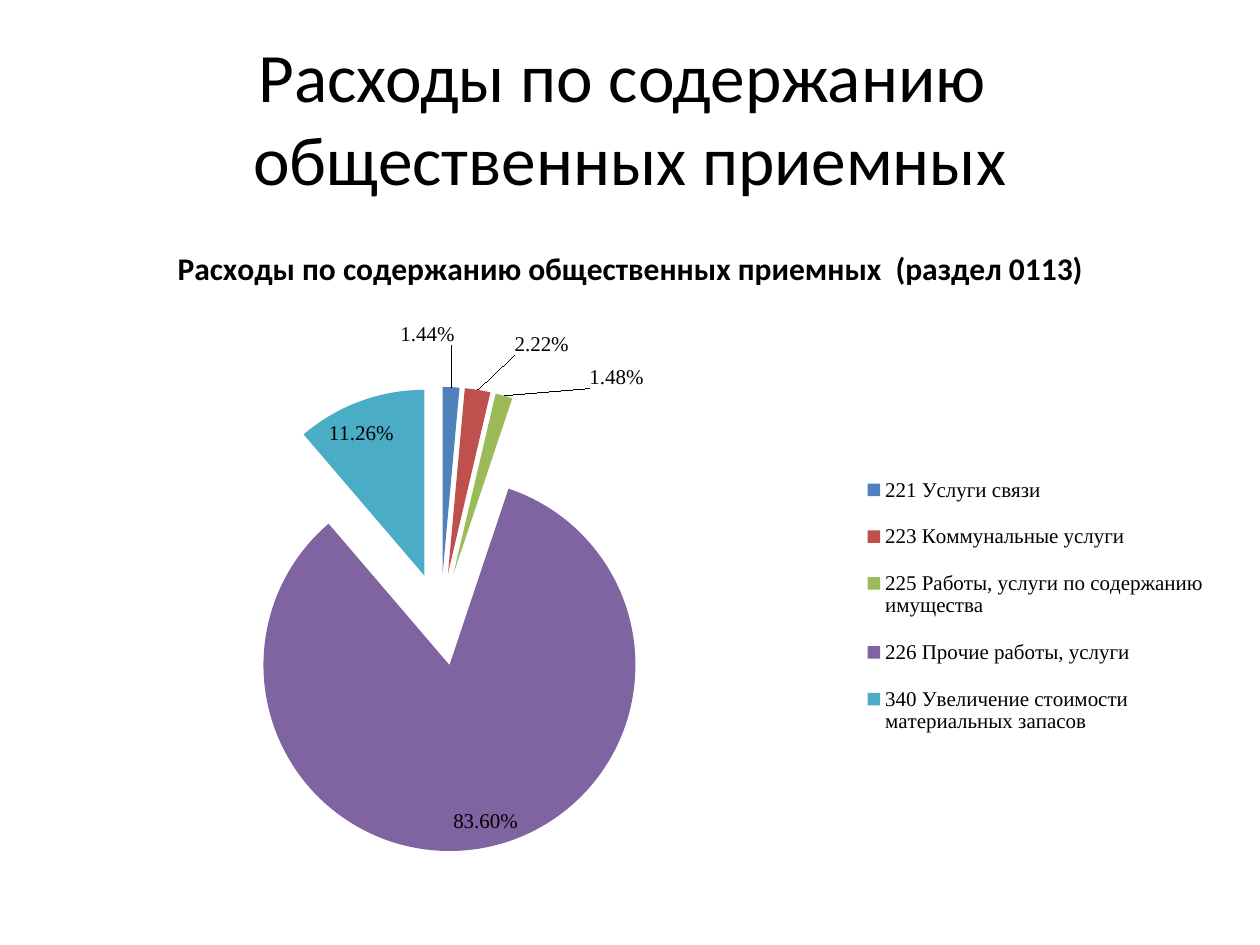
from dataclasses import dataclass

import lxml.etree
import pptx
import pptx.chart.data
import pptx.dml.color
import pptx.enum.chart
import pptx.enum.text
import pptx.oxml
import pptx.oxml.ns
import pptx.util

Inches = pptx.util.Inches
Pt = pptx.util.Pt
qn = pptx.oxml.ns.qn

EXPENSES = {
    "221 Услуги связи": 1.44,
    "223 Коммунальные услуги": 2.22,
    "225 Работы, услуги по содержанию имущества": 1.48,
    "226 Прочие работы, услуги": 83.6,
    "340 Увеличение стоимости материальных запасов": 11.26,
}
# Shifts of the labels of the thin slices, as fractions of the chart
LABEL_SHIFTS = {0: (-0.02, -0.05), 1: (0.03, -0.04), 2: (0.07, 0)}


@dataclass(frozen=True)
class Theme:
    heading_font: str = "Calibri"
    label_font: str = "Times New Roman"
    text: str = "000000"
    slices: tuple = ("4F81BD", "C0504D", "9BBB59", "8064A2", "4BACC6")
    title_size: float = 39.6
    chart_title_size: float = 18
    chart_size: float = 10
    label_size: float = 12


def manual_layout(**values):
    """Return a c:layout element with the given manualLayout settings."""
    layout = pptx.oxml.parse_xml(
        f'<c:layout xmlns:c="{pptx.oxml.ns.nsuri("c")}"><c:manualLayout/></c:layout>')
    for tag, value in values.items():
        lxml.etree.SubElement(layout[0], qn(f"c:{tag}")).set("val", str(value))
    return layout


def replace_layout(parent, layout, position):
    for old in parent.findall(qn("c:layout")):
        parent.remove(old)
    parent.insert(position, layout)


class SlideBuilder:
    def __init__(self, slide, theme):
        self.slide = slide
        self.theme = theme

    def style(self, font, name, size, bold=False):
        font.name = name
        font.size = Pt(size)
        font.bold = bold
        font.color.rgb = pptx.dml.color.RGBColor.from_string(self.theme.text)

    def title(self, lines, left, top, width, height):
        title = self.slide.shapes.title
        title.left, title.top, title.width, title.height = map(
            Inches, (left, top, width, height))
        frame = title.text_frame
        frame.word_wrap = True
        frame.vertical_anchor = pptx.enum.text.MSO_ANCHOR.MIDDLE
        paragraph = frame.paragraphs[0]
        paragraph.alignment = pptx.enum.text.PP_ALIGN.CENTER
        for index, line in enumerate(lines):
            if index:
                paragraph.add_line_break()
            run = paragraph.add_run()
            run.text = line
            self.style(run.font, self.theme.heading_font, self.theme.title_size)

    def pie(self, heading, amounts, left, top, width, height):
        data = pptx.chart.data.CategoryChartData()
        data.categories = list(amounts)
        data.add_series(heading, list(amounts.values()))
        chart = self.slide.shapes.add_chart(
            pptx.enum.chart.XL_CHART_TYPE.PIE,
            *map(Inches, (left, top, width, height)), data).chart
        self.style(chart.font, self.theme.heading_font, self.theme.chart_size)
        chart.has_title = True
        run = chart.chart_title.text_frame.paragraphs[0].add_run()
        run.text = heading
        self.style(run.font, self.theme.heading_font,
                   self.theme.chart_title_size, bold=True)
        chart.chart_title.include_in_layout = False
        plot_area = chart.plots[0]._element.getparent()
        replace_layout(plot_area, manual_layout(
            layoutTarget="inner", xMode="edge", yMode="edge",
            x=0.064, y=0.242, w=0.553, h=0.676), 0)
        self.slices(chart.plots[0])
        self.legend(chart)

    def slices(self, plot):
        plot.vary_by_categories = True
        series = plot.series[0]
        for index, color in enumerate(self.theme.slices):
            fill = series.points[index].format.fill
            fill.solid()
            fill.fore_color.rgb = pptx.dml.color.RGBColor.from_string(color)
        explosion = pptx.oxml.parse_xml(
            f'<c:explosion xmlns:c="{pptx.oxml.ns.nsuri("c")}" val="25"/>')
        series._element.find(qn("c:dPt")).addprevious(explosion)
        self.percent_labels(series)

    def percent_labels(self, series):
        positions = pptx.enum.chart.XL_LABEL_POSITION
        labels = series.data_labels
        labels.show_percentage = True
        labels.show_value = False
        labels.number_format = "0.00%"
        labels.number_format_is_linked = False
        labels.position = positions.BEST_FIT
        self.style(labels.font, self.theme.label_font, self.theme.label_size)
        for index, (x, y) in LABEL_SHIFTS.items():
            label = series.points[index].data_label
            label.position = positions.BEST_FIT
            self.style(label.font, self.theme.label_font, self.theme.label_size)
        for element, (x, y) in zip(labels._element.findall(qn("c:dLbl")),
                                   LABEL_SHIFTS.values()):
            replace_layout(element, manual_layout(x=x, y=y), 1)
            for tag, shown in (("showVal", "0"), ("showPercent", "1")):
                element.find(qn(f"c:{tag}")).set("val", shown)
        leaders = labels._element.find(qn("c:showLeaderLines"))
        if leaders is None:
            leaders = lxml.etree.SubElement(labels._element, qn("c:showLeaderLines"))
        leaders.set("val", "1")

    def legend(self, chart):
        chart.has_legend = True
        legend = chart.legend
        legend.position = pptx.enum.chart.XL_LEGEND_POSITION.RIGHT
        legend.include_in_layout = False
        self.style(legend.font, self.theme.label_font, self.theme.label_size)
        replace_layout(legend._element, manual_layout(
            xMode="edge", yMode="edge", x=0.69, y=0.34, w=0.3, h=0.44), 1)


def main():
    deck = pptx.Presentation()
    deck.slide_width, deck.slide_height = Inches(10), Inches(7.5)
    slide = deck.slides.add_slide(deck.slide_layouts[5])
    builder = SlideBuilder(slide, Theme())
    builder.title(["Расходы по содержанию ", "общественных приемных"],
                  0.5, 0.3, 9, 1.25)
    builder.pie("Расходы по содержанию общественных приемных  (раздел 0113)",
                EXPENSES, 0.28, 1.75, 9.45, 5.46)
    deck.save("out.pptx")


if __name__ == "__main__":
    main()
